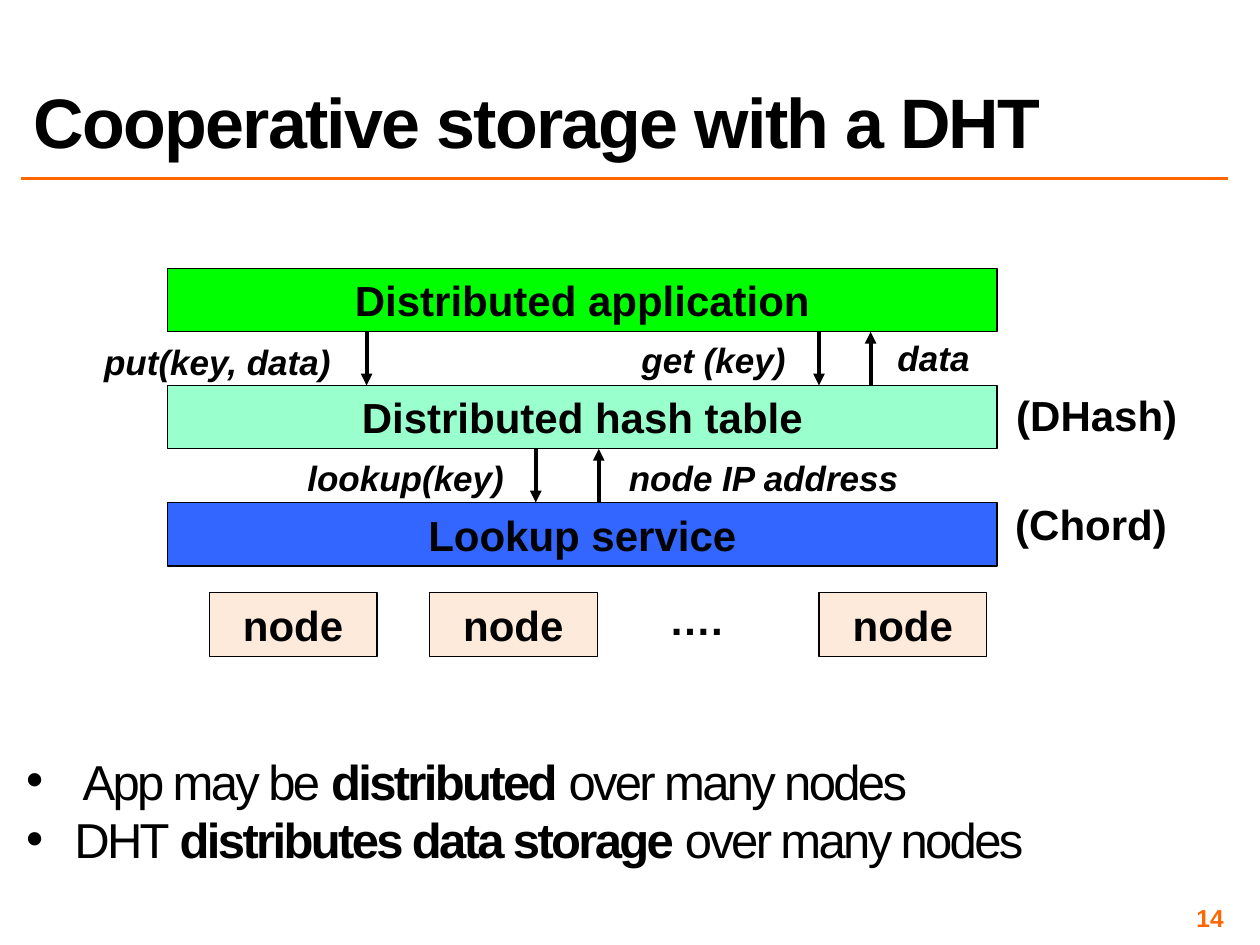
from lxml.etree import SubElement
from pptx import Presentation
from pptx.dml.color import RGBColor
from pptx.enum.shapes import MSO_CONNECTOR, MSO_SHAPE
from pptx.enum.text import MSO_ANCHOR, MSO_AUTO_SIZE, PP_ALIGN
from pptx.oxml.ns import qn
from pptx.util import Cm, Pt

BLACK = RGBColor(0x00, 0x00, 0x00)
ORANGE = RGBColor(0xFF, 0x66, 0x00)
GREEN = RGBColor(0x00, 0xFF, 0x00)
MINT = RGBColor(0x99, 0xFF, 0xCC)
BLUE = RGBColor(0x33, 0x66, 0xFF)
PEACH = RGBColor(0xFD, 0xEA, 0xDA)

# Content (lengths in cm)
TITLE = "Cooperative storage with a DHT"
PAGE_NUMBER = "14"
LAYERS = [
    ("Distributed application", GREEN),
    ("Distributed hash table", MINT),
    ("Lookup service", BLUE),
]
# gap below which layer, x, pointing down
CALLS = [
    (0, 7.39, True),
    (0, 16.51, True),
    (0, 17.55, False),
    (1, 10.8, True),
    (1, 12.07, False),
]
# text, left, top, width
CALL_LABELS = [
    ("put(key, data)", 1.83, 6.73, 5.11),
    ("get (key)", 12.67, 6.7, 3.43),
    ("data", 17.83, 6.65, 1.98),
    ("lookup(key)", 5.92, 9.07, 4.52),
    ("node IP address", 12.4, 9.07, 5.99),
]
SYSTEM_LABELS = [
    ("(DHash)", 20.22, 7.72, 3.78),
    ("(Chord)", 20.19, 9.93, 3.61),
    ("….", 13.23, 11.84, 1.6),
]
NODE_LEFTS = [4.22, 8.66, 16.51]
# runs of each point: text, bold
POINTS = [
    [(" App may be ", False), ("distributed", True), (" over many nodes", False)],
    [("DHT ", False), ("distributes data storage ", True), ("over many nodes", False)],
]

# Layout rules
MARGIN, CONTENT_WIDTH = 0.43, 24.33
LAYER_LEFT, LAYER_TOP, LAYER_WIDTH, LAYER_HEIGHT = 3.38, 5.41, 16.72, 1.28
LAYER_PITCH = 2.36
NODE_TOP, NODE_WIDTH, NODE_HEIGHT = 11.94, 3.38, 1.3

prs = Presentation()
prs.slide_width, prs.slide_height = Cm(25.4), Cm(19.05)
slide = prs.slides.add_slide(prs.slide_layouts[5])


def add_run(paragraph, text, size, bold=True, italic=False, color=BLACK, spacing=0):
    run = paragraph.add_run()
    run.text = text
    font = run.font
    font.name, font.size, font.bold, font.italic = "Arial", Pt(size), bold, italic
    font.color.rgb = color
    if spacing:
        run._r.get_or_add_rPr().set("spc", str(int(spacing * 100)))


def set_insets(frame, inset):
    frame.margin_left = frame.margin_right = Cm(inset)
    frame.margin_top = frame.margin_bottom = Cm(inset)


def add_box(text, left, top, width, height, fill):
    box = slide.shapes.add_shape(
        MSO_SHAPE.RECTANGLE, Cm(left), Cm(top), Cm(width), Cm(height))
    box.shadow.inherit = False
    box.fill.solid()
    box.fill.fore_color.rgb = fill
    box.line.color.rgb = BLACK
    box.line.width = Pt(0.75)
    box.text_frame.vertical_anchor = MSO_ANCHOR.MIDDLE
    paragraph = box.text_frame.paragraphs[0]
    paragraph.alignment = PP_ALIGN.CENTER
    add_run(paragraph, text, 24)


def add_label(text, left, top, width, height, size, italic=False):
    label = slide.shapes.add_textbox(Cm(left), Cm(top), Cm(width), Cm(height))
    label.text_frame.word_wrap = False
    paragraph = label.text_frame.paragraphs[0]
    paragraph.alignment = PP_ALIGN.CENTER
    add_run(paragraph, text, size, italic=italic)


def add_line(x1, y1, x2, y2, color, width, arrow=False):
    line = slide.shapes.add_connector(
        MSO_CONNECTOR.STRAIGHT, Cm(x1), Cm(y1), Cm(x2), Cm(y2))
    line.line.color.rgb = color
    line.line.width = Pt(width)
    if arrow:
        SubElement(line.line._get_or_add_ln(), qn("a:tailEnd"), type="triangle")
    SubElement(line._element.spPr, qn("a:effectLst"))


# Title and rule
title = slide.shapes.title
title.left, title.top = Cm(MARGIN), Cm(MARGIN)
title.width, title.height = Cm(CONTENT_WIDTH), Cm(2.97)
title.text_frame.auto_size = MSO_AUTO_SIZE.NONE
title.text_frame.vertical_anchor = MSO_ANCHOR.BOTTOM
heading = title.text_frame.paragraphs[0]
heading.alignment = PP_ALIGN.LEFT
heading.line_spacing = 0.8
add_run(heading, TITLE, 40, spacing=-1)
add_line(MARGIN, 3.6, MARGIN + CONTENT_WIDTH, 3.6, ORANGE, 2)

# Layers and the calls between them
for row, (name, fill) in enumerate(LAYERS):
    add_box(name, LAYER_LEFT, LAYER_TOP + row * LAYER_PITCH,
            LAYER_WIDTH, LAYER_HEIGHT, fill)
for row, x, down in CALLS:
    upper = LAYER_TOP + row * LAYER_PITCH + LAYER_HEIGHT
    lower = LAYER_TOP + (row + 1) * LAYER_PITCH
    start, end = (upper, lower) if down else (lower, upper)
    add_line(x, start, x, end, BLACK, 2.25, arrow=True)
for text, left, top, width in CALL_LABELS:
    add_label(text, left, top, width, 1.12, 20, italic=True)

# Nodes, ellipsis and system names
for left in NODE_LEFTS:
    add_box("node", left, NODE_TOP, NODE_WIDTH, NODE_HEIGHT, PEACH)
for text, left, top, width in SYSTEM_LABELS:
    add_label(text, left, top, width, 1.28, 24)

# Bullet points
points = slide.shapes.add_textbox(
    Cm(MARGIN), Cm(15.27), Cm(CONTENT_WIDTH), Cm(2.72)).text_frame
points.word_wrap = True
set_insets(points, 0.1)
for index, runs in enumerate(POINTS):
    point = points.add_paragraph() if index else points.paragraphs[0]
    point.line_spacing = 0.8
    point.space_before = Pt(6.5)
    properties = point._p.get_or_add_pPr()
    properties.set("marL", str(Cm(0.97)))
    properties.set("indent", str(-Cm(0.97)))
    SubElement(properties, qn("a:buFont"), typeface="Arial")
    SubElement(properties, qn("a:buChar"), char="•")
    for text, bold in runs:
        add_run(point, text, 28, bold=bold, spacing=-1.5)

# Page number
page = slide.shapes.add_textbox(Cm(18.85), Cm(18.21), Cm(5.92), Cm(0.58)).text_frame
page.word_wrap = True
page.vertical_anchor = MSO_ANCHOR.MIDDLE
set_insets(page, 0.1)
page.paragraphs[0].alignment = PP_ALIGN.RIGHT
add_run(page.paragraphs[0], PAGE_NUMBER, 14, color=ORANGE)

prs.save("out.pptx")
